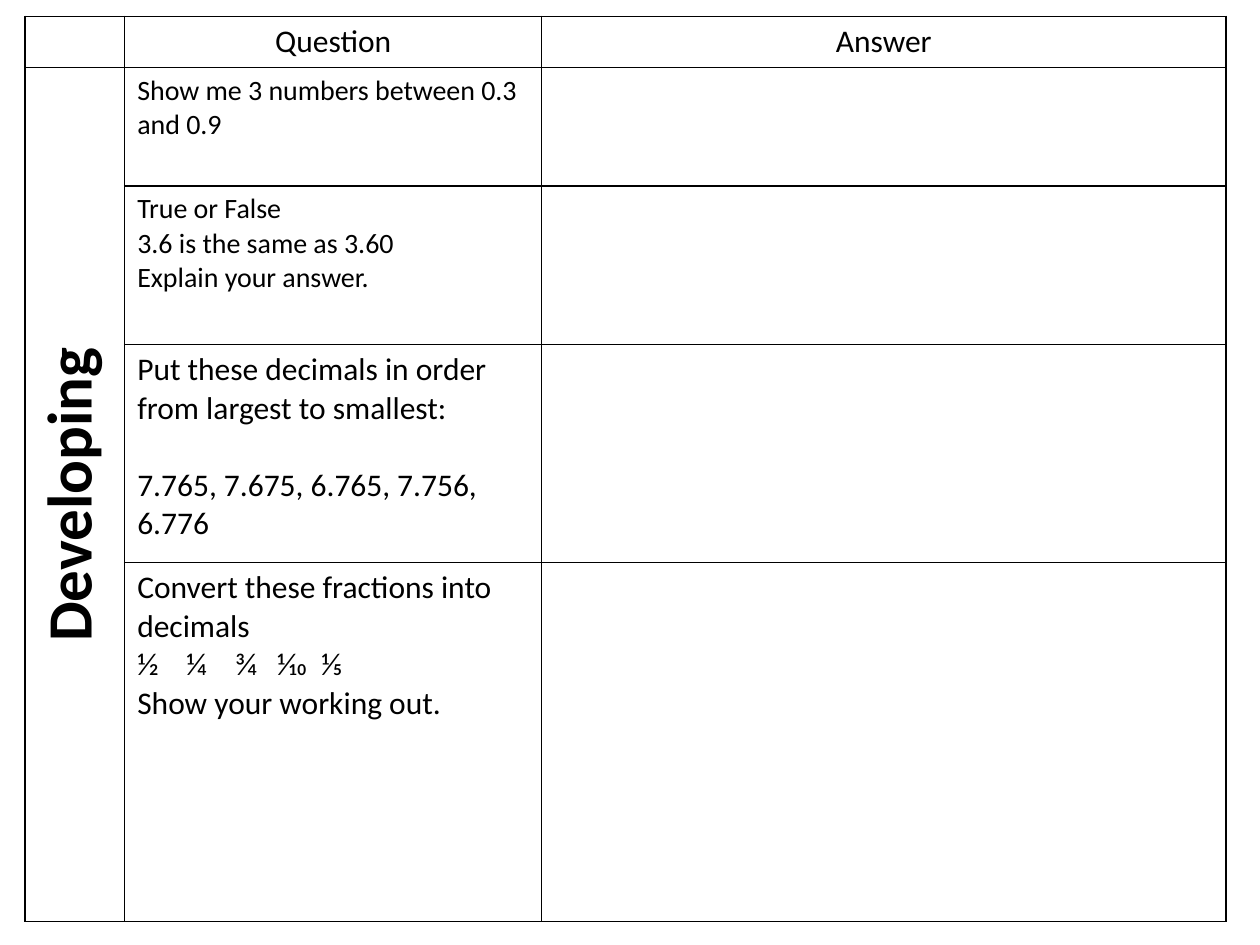
from lxml import etree
from pptx import Presentation
from pptx import util as u
from pptx.enum import text
from pptx.dml.color import RGBColor
from pptx.oxml import ns

COLOURS = {"ink": "000000"}
FONT = "Calibri"
COLUMNS = [0.79, 3.31, 5.43]
ROWS = [0.4, 0.94, 1.26, 1.73, 2.85]
FRACTION_STOPS = [0.39, 0.78, 1.11, 1.46]

# Question text with its size, one entry for each row below the header
QUESTIONS = [
    (16, ["Show me 3 numbers between 0.3 and 0.9"]),
    (16, ["True or False", "3.6 is the same as 3.60", "Explain your answer."]),
    (18, ["Put these decimals in order from largest to smallest:",
          "7.765, 7.675, 6.765, 7.756, 6.776"]),
    (18, ["Convert these fractions into decimals",
          "\t".join(["1⁄2", "1⁄4", "3⁄4", "1⁄10", "1⁄5"]),
          "Show your working out."]),
]


def write(cell, lines, size, bold=False, align=text.PP_ALIGN.LEFT):
    cell.text_frame.text = "\n".join(lines)
    for para in cell.text_frame.paragraphs:
        para.alignment = align
        for span in para.runs:
            span.font.name = FONT
            span.font.size = u.Pt(size)
            span.font.bold = bold
            span.font.color.rgb = RGBColor.from_string(COLOURS["ink"])


def add_borders(cell):
    properties = cell._tc.get_or_add_tcPr()
    for position, side in enumerate(["lnL", "lnR", "lnT", "lnB"]):
        line = etree.Element(ns.qn(f"a:{side}"), w=str(u.Pt(1)))
        fill = etree.SubElement(line, ns.qn("a:solidFill"))
        etree.SubElement(fill, ns.qn("a:srgbClr"), val=COLOURS["ink"])
        properties.insert(position, line)


deck = Presentation()
deck.slide_width, deck.slide_height = u.Inches(10), u.Inches(7.5)
page = deck.slides.add_slide(deck.slide_layouts[6])

# Worksheet grid
table = page.shapes.add_table(
    len(ROWS), len(COLUMNS), u.Inches(0.2), u.Inches(0.13),
    u.Inches(sum(COLUMNS)), u.Inches(sum(ROWS))).table
table.first_row = table.horz_banding = False
for column, width in zip(table.columns, COLUMNS):
    column.width = u.Inches(width)
for row, height in zip(table.rows, ROWS):
    row.height = u.Inches(height)
for cell in table.iter_cells():
    cell.fill.background()
    add_borders(cell)

# Header row
for column, heading in enumerate(["Question", "Answer"], start=1):
    write(table.cell(0, column), [heading], 18, align=text.PP_ALIGN.CENTER)

# Level label, turned to read upwards
level = table.cell(1, 0)
level.merge(table.cell(len(ROWS) - 1, 0))
write(level, ["Developing"], 36, bold=True, align=text.PP_ALIGN.CENTER)
level._tc.get_or_add_tcPr().set("vert", "vert270")

# Questions
for row, (size, lines) in enumerate(QUESTIONS, start=1):
    write(table.cell(row, 1), lines, size)

# One line of space above the decimals to be ordered
table.cell(3, 1).text_frame.paragraphs[1].space_before = u.Pt(22)

# Tab stops between the fractions
fractions = table.cell(4, 1).text_frame.paragraphs[1]
stops = etree.SubElement(fractions._p.get_or_add_pPr(), ns.qn("a:tabLst"))
for stop in FRACTION_STOPS:
    etree.SubElement(stops, ns.qn("a:tab"), pos=str(u.Inches(stop)), algn="l")

deck.save("out.pptx")
